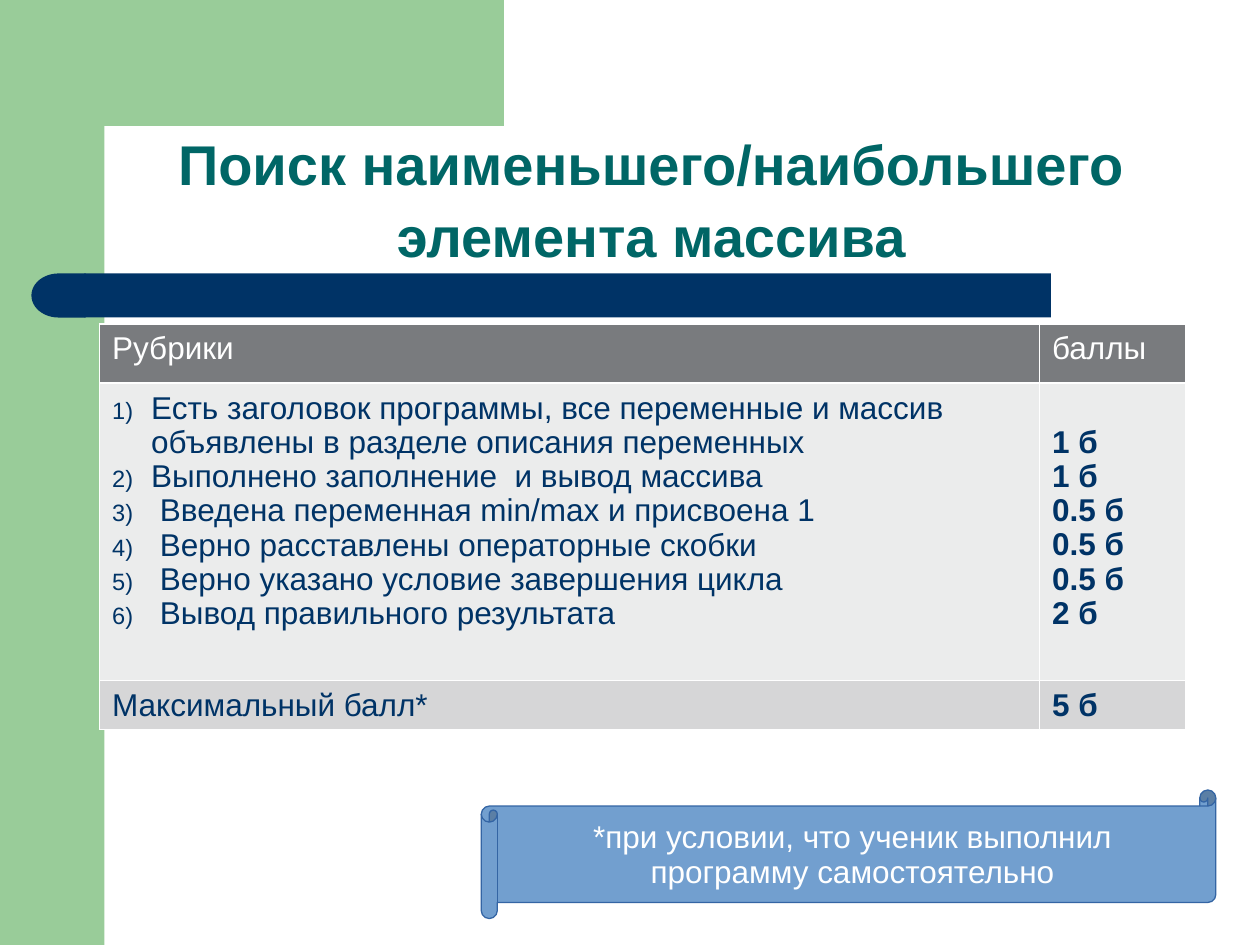
"""Build the grading rubric slide for the array minimum/maximum task."""
from dataclasses import dataclass
from math import cos, pi, sin

from lxml.etree import SubElement
from pptx import Presentation
from pptx.dml.color import RGBColor
from pptx.enum.shapes import MSO_SHAPE
from pptx.enum.text import MSO_ANCHOR, PP_ALIGN
from pptx.oxml.ns import qn
from pptx.util import Inches, Pt

GREEN, NAVY, TEAL, WHITE = "99CC99", "003366", "006666", "FFFFFF"


@dataclass
class Decoration:
    kind: MSO_SHAPE
    left: float
    top: float
    width: float
    height: float
    fill: str
    flipped: bool = False


@dataclass
class RubricRow:
    height: float
    fill: str
    color: str
    labels: list[str]
    scores: list[str]
    numbered: bool = False
    bold_scores: bool = True
    score_top: float = 0.07


DECORATIONS = [
    Decoration(MSO_SHAPE.RECTANGLE, 0, 0, 0.83, 7.5, GREEN),
    Decoration(MSO_SHAPE.RECTANGLE, 0.67, 2.17, 7.67, 0.35, NAVY),
    Decoration(MSO_SHAPE.FLOWCHART_DELAY, 0.25, 2.17, 0.43, 0.35, NAVY, True),
]

CRITERIA = [
    "Есть заголовок программы, все переменные и массив объявлены в разделе описания переменных",
    "Выполнено заполнение  и вывод массива",
    " Введена переменная min/max и присвоена 1",
    " Верно расставлены операторные скобки",
    " Верно указано условие завершения цикла",
    " Вывод правильного результата",
]
SCORES = ["1 б", "1 б", "0.5 б", "0.5 б", "0.5 б", "2 б"]

ROWS = [
    RubricRow(0.47, "797B7E", WHITE, ["Рубрики"], ["баллы"], bold_scores=False),
    RubricRow(2.36, "EBECEC", NAVY, CRITERIA, SCORES, numbered=True, score_top=0.34),
    RubricRow(0.39, "D6D6D7", NAVY, ["Максимальный балл*"], ["5 б"]),
]
COLUMN_WIDTHS = [7.46, 1.16]


def paint(target, color: str) -> None:
    target.solid()
    target.fore_color.rgb = RGBColor.from_string(color)


def write(paragraph, text: str, size: int, color: str, bold: bool = False) -> None:
    run = paragraph.add_run()
    run.text = text
    run.font.name = "Arial"
    run.font.size = Pt(size)
    run.font.bold = bold
    run.font.color.rgb = RGBColor.from_string(color)


def set_margins(target, top: float) -> None:
    target.margin_left = target.margin_right = Inches(0.1)
    target.margin_top = Inches(top)
    target.margin_bottom = Inches(0.05)


def add_decoration(slide, item: Decoration):
    shape = slide.shapes.add_shape(
        item.kind, Inches(item.left), Inches(item.top), Inches(item.width), Inches(item.height)
    )
    shape.shadow.inherit = False
    paint(shape.fill, item.fill)
    shape.line.fill.background()
    if item.flipped:
        shape.element.spPr.xfrm.set("flipH", "1")
    return shape


def add_corner(slide) -> None:
    center, radius, steps = 1.16, 0.33, 16
    angles = [pi / 2 * step / steps for step in range(steps + 1)]
    arc = [(center - radius * sin(angle), center - radius * cos(angle)) for angle in angles]
    points = [(3.5, 0), (3.5, 0.83), *arc, (0.83, 1.28), (0.5, 1.28), (0.5, 0)]
    builder = slide.shapes.build_freeform(*points[0], scale=Inches(1))
    builder.add_line_segments(points[1:])
    corner = builder.convert_to_shape()
    corner.shadow.inherit = False
    paint(corner.fill, GREEN)
    corner.line.fill.background()


def number_paragraph(paragraph) -> None:
    properties = paragraph._p.get_or_add_pPr()
    properties.set("marL", str(Inches(0.31)))
    properties.set("indent", str(-Inches(0.31)))
    color = SubElement(properties, qn("a:buClr"))
    SubElement(color, qn("a:srgbClr"), val=NAVY)
    SubElement(properties, qn("a:buSzPct"), val="75000")
    SubElement(properties, qn("a:buFont"), typeface="Arial")
    SubElement(properties, qn("a:buAutoNum"), type="arabicParenR")


def add_borders(cell) -> None:
    properties = cell._tc.get_or_add_tcPr()
    for index, side in enumerate(("a:lnL", "a:lnR", "a:lnT", "a:lnB")):
        line = properties.makeelement(qn(side), {"w": str(Pt(0.96))})
        fill = SubElement(line, qn("a:solidFill"))
        SubElement(fill, qn("a:srgbClr"), val=WHITE)
        properties.insert(index, line)


def fill_cell(cell, lines: list[str], row: RubricRow, top: float, numbered: bool, bold: bool) -> None:
    set_margins(cell, top)
    paint(cell.fill, row.fill)
    add_borders(cell)
    frame = cell.text_frame
    for index, text in enumerate(lines):
        paragraph = frame.add_paragraph() if index else frame.paragraphs[0]
        if numbered:
            number_paragraph(paragraph)
        paragraph.line_spacing = 0.97
        write(paragraph, text, 18, row.color, bold)


def add_rubric(slide) -> None:
    height = sum(row.height for row in ROWS)
    table = slide.shapes.add_table(
        len(ROWS), len(COLUMN_WIDTHS), Inches(0.79), Inches(2.57), Inches(sum(COLUMN_WIDTHS)), Inches(height)
    ).table
    table.horz_banding = False
    for column, width in zip(table.columns, COLUMN_WIDTHS):
        column.width = Inches(width)
    for index, row in enumerate(ROWS):
        table.rows[index].height = Inches(row.height)
        fill_cell(table.cell(index, 0), row.labels, row, 0.07, row.numbered, False)
        fill_cell(table.cell(index, 1), row.scores, row, row.score_top, False, row.bold_scores)


def add_title(slide) -> None:
    title = slide.shapes.title
    title.left, title.top = Inches(1.06), Inches(1.15)
    title.width, title.height = Inches(8.22), Inches(0.83)
    title.text_frame.vertical_anchor = MSO_ANCHOR.MIDDLE
    paragraph = title.text_frame.paragraphs[0]
    paragraph.alignment = PP_ALIGN.CENTER
    paragraph.line_spacing = 1.07
    write(paragraph, "Поиск наименьшего/наибольшего элемента массива", 32, TEAL, True)


def add_note(slide) -> None:
    scroll = add_decoration(
        slide, Decoration(MSO_SHAPE.HORIZONTAL_SCROLL, 3.82, 6.27, 5.83, 1.02, "729FCF")
    )
    paint(scroll.line.fill, "3465A4")
    scroll.line.width = Pt(0.75)
    frame = scroll.text_frame
    frame.word_wrap = True
    frame.vertical_anchor = MSO_ANCHOR.MIDDLE
    set_margins(frame, 0.07)
    paragraph = frame.paragraphs[0]
    paragraph.alignment = PP_ALIGN.CENTER
    paragraph.line_spacing = 0.93
    write(paragraph, "*при условии, что ученик выполнил программу самостоятельно", 18, WHITE)


def main() -> None:
    presentation = Presentation()
    presentation.slide_width, presentation.slide_height = Inches(10), Inches(7.5)
    slide = presentation.slides.add_slide(presentation.slide_layouts[5])
    for item in DECORATIONS:
        add_decoration(slide, item)
    add_corner(slide)
    add_title(slide)
    add_rubric(slide)
    add_note(slide)
    presentation.save("out.pptx")


if __name__ == "__main__":
    main()
